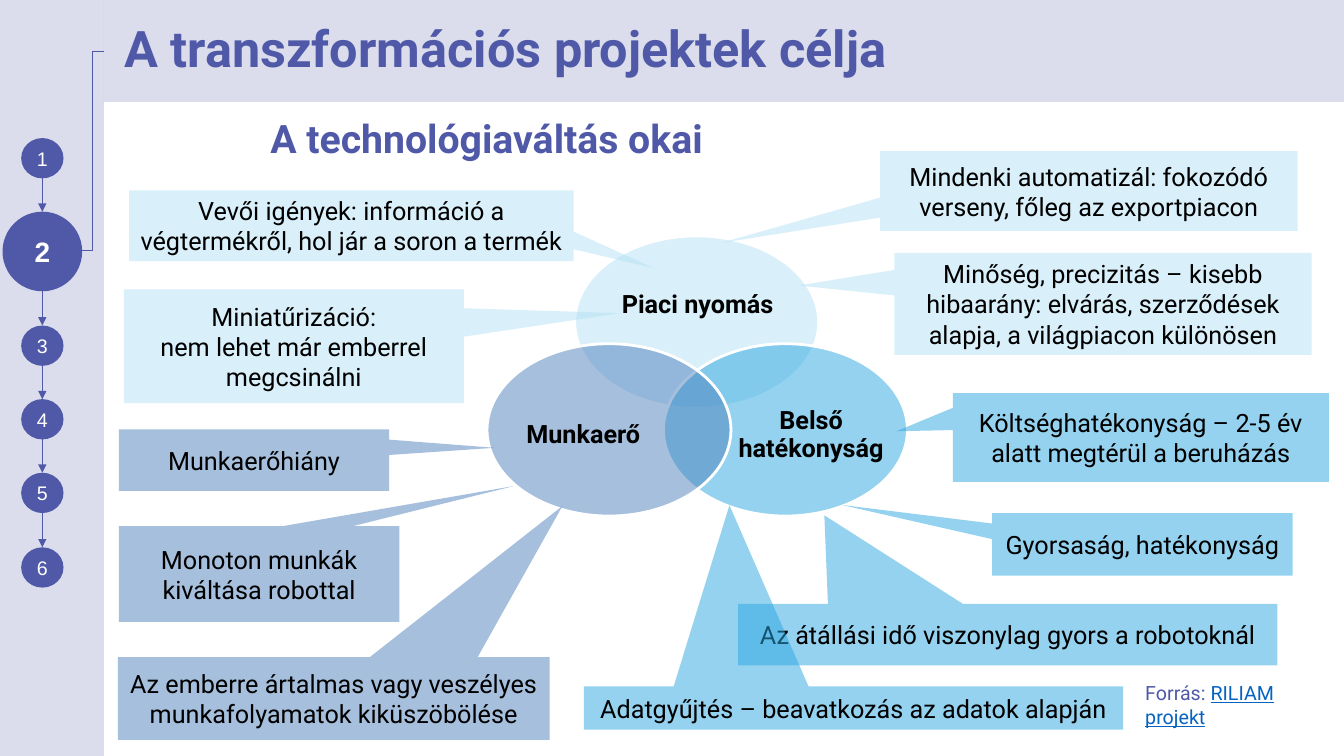
"""Build the slide on why companies launch technology transformation projects."""
from dataclasses import dataclass
from itertools import pairwise

from lxml.etree import SubElement
from pptx import Presentation
from pptx.dml.color import RGBColor
from pptx.enum.shapes import MSO_CONNECTOR as CONN, MSO_SHAPE as SHAPE
from pptx.enum.text import MSO_ANCHOR as ANCHOR, MSO_AUTO_SIZE as AUTO, PP_ALIGN as ALIGN
from pptx.oxml.ns import qn
from pptx.util import Inches, Pt

COLORS = {
    "indigo": "4F59A8",
    "market": "B5E0F5",
    "efficiency": "2BA6E1",
    "labour": "4F81BD",
    "link": "0563C1",
    "white": "FFFFFF",
    "black": "000000",
}
Box = tuple[float, float, float, float]


@dataclass
class Step:
    label: str
    top: float
    width: float = 0.42
    height: float = 0.4
    size: int = 14
    bold: bool = False


@dataclass
class Reason:
    label: str
    color: str
    left: float
    top: float
    text_box: Box


@dataclass
class Callout:
    text: str
    color: str
    box: Box
    tip: tuple[float, float]


STEP_X = 0.42
STEPS = [
    Step("1", 1.37),
    Step("2", 2.1, 0.79, 0.79, 20, True),
    Step("3", 3.23),
    Step("4", 3.96),
    Step("5", 4.69),
    Step("6", 5.43),
]
REASONS = [
    Reason("Piaci nyomás", "market", 5.7, 2.34, (6.03, 2.64, 1.78, 0.77)),
    Reason("Belső hatékonyság", "efficiency", 6.58, 3.41, (7.32, 3.85, 1.45, 0.94)),
    Reason("Munkaerő", "labour", 4.83, 3.41, (5.06, 3.85, 1.45, 0.94)),
]
CALLOUTS = [
    Callout("Mindenki automatizál: fokozódó verseny, főleg az exportpiacon",
            "market", (8.73, 1.5, 4.14, 0.79), (-0.88, 0.65)),
    Callout("Monoton munkák kiváltása robottal",
            "labour", (1.18, 5.22, 2.78, 0.95), (0.91, -0.92)),
    Callout("Költséghatékonyság – 2-5 év alatt megtérül a beruházás",
            "efficiency", (9.45, 3.9, 3.73, 0.88), (-0.65, -0.07)),
    Callout("Minőség, precizitás – kisebb hibaarány: elvárás, szerződések alapja, "
            "a világpiacon különösen",
            "market", (8.87, 2.51, 4.14, 1.01), (-0.73, -0.18)),
    Callout("Miniatűrizáció:\nnem lehet már emberrel megcsinálni",
            "market", (1.23, 2.87, 3.37, 1.13), (0.96, -0.29)),
    Callout("Vevői igények: információ a végtermékről, hol jár a soron a termék",
            "market", (1.28, 1.89, 4.41, 0.7), (0.68, 0.6)),
    Callout("Gyorsaság, hatékonyság",
            "efficiency", (9.84, 5.09, 2.98, 0.62), (-1, -0.63)),
    Callout("Az átállási idő viszonylag gyors a robotoknál",
            "efficiency", (7.32, 5.99, 5.35, 0.61), (-0.34, -1.94)),
    Callout("Adatgyűjtés – beavatkozás az adatok alapján",
            "efficiency", (5.79, 6.81, 5.35, 0.43), (-0.23, -4.68)),
    Callout("Munkaerőhiány",
            "labour", (1.18, 4.26, 2.68, 0.61), (0.89, -0.2)),
    Callout("Az emberre ártalmas vagy veszélyes munkafolyamatok kiküszöbölése",
            "labour", (1.17, 6.52, 4.28, 0.82), (0.53, -2.33)),
]


def rgb(name: str) -> RGBColor:
    return RGBColor.from_string(COLORS[name])


def write(tf, text: str, *, size: float = 18, color: str = "black", font: str = "Roboto",
          bold: bool = False, underline: bool = False, align=ALIGN.CENTER,
          spacing: float = 1.0, indent: float = 0, append: bool = False) -> None:
    for i, line in enumerate(text.split("\n")):
        p = tf.add_paragraph() if i else tf.paragraphs[-1]
        if not append:
            p.alignment = align
            p.line_spacing = spacing
            pPr = p._p.get_or_add_pPr()
            pPr.set("marL", str(Inches(indent)))
            pPr.set("indent", "0")
        r = p.add_run()
        r.text = line
        r.font.name = font
        r.font.size = Pt(size)
        r.font.bold = bold
        r.font.underline = underline
        r.font.color.rgb = rgb(color)


def frame(s, inset: tuple[float, float] = (0.1, 0.05), anchor=ANCHOR.MIDDLE):
    tf = s.text_frame
    tf.word_wrap = True
    tf.auto_size = AUTO.NONE
    tf.vertical_anchor = anchor
    tf.margin_left = tf.margin_right = Inches(inset[0])
    tf.margin_top = tf.margin_bottom = Inches(inset[1])
    return tf


def paint(s, color: str, opacity: int = 100) -> None:
    s.fill.solid()
    s.fill.fore_color.rgb = rgb(color)
    if opacity < 100:
        clr = s._element.spPr.find(qn("a:solidFill"))[0]
        SubElement(clr, qn("a:alpha"), val=str(opacity * 1000))


def shape(sl, kind, box: Box, color: str, opacity: int = 100):
    s = sl.shapes.add_shape(kind, *map(Inches, box))
    s.shadow.inherit = False
    s.line.fill.background()
    paint(s, color, opacity)
    return s


def text_box(sl, box: Box, **kwargs):
    return frame(sl.shapes.add_textbox(*map(Inches, box)), **kwargs)


def connect(sl, kind, ends: Box, width: float, arrow: bool = False) -> None:
    c = sl.shapes.add_connector(kind, *map(Inches, ends))
    c.line.color.rgb = rgb("indigo")
    c.line.width = Pt(width)
    if arrow:
        SubElement(c.line._get_or_add_ln(), qn("a:tailEnd"), type="triangle")
    SubElement(c._element.spPr, qn("a:effectLst"))


def draw_title(sl) -> None:
    s = sl.shapes.title
    s.left, s.top, s.width, s.height = map(Inches, (1.03, 0, 12.3, 1.01))
    paint(s, "indigo", 20)
    write(frame(s), "A transzformációs projektek célja", size=36, color="indigo", bold=True,
          align=ALIGN.LEFT, spacing=0.9, indent=0.1)


def draw_steps(sl) -> None:
    shape(sl, SHAPE.RECTANGLE, (0, 0, 1.03, 7.5), "indigo", 20)
    for a, b in pairwise(STEPS):
        connect(sl, CONN.STRAIGHT, (STEP_X, a.top + a.height, STEP_X, b.top), 1, arrow=True)
    for step in STEPS:
        box = (STEP_X - step.width / 2, step.top, step.width, step.height)
        s = shape(sl, SHAPE.OVAL, box, "indigo")
        write(frame(s, (0, 0)), step.label, size=step.size, color="white", font="Arial",
              bold=step.bold)
    connect(sl, CONN.ELBOW, (0.81, 2.49, 1.03, 0.51), 0.75)


def draw_reason(sl, reason: Reason) -> None:
    s = shape(sl, SHAPE.OVAL, (reason.left, reason.top, 2.42, 1.71), reason.color, 50)
    s.line.color.rgb = rgb("white")
    s.line.width = Pt(2)
    write(text_box(sl, reason.text_box, inset=(0, 0)), reason.label, bold=True, spacing=0.9)


def draw_callout(sl, callout: Callout) -> None:
    s = shape(sl, SHAPE.RECTANGULAR_CALLOUT, callout.box, callout.color, 50)
    s.adjustments[0], s.adjustments[1] = callout.tip
    write(frame(s), callout.text)


def main() -> None:
    prs = Presentation()
    prs.slide_width, prs.slide_height = Inches(13.33), Inches(7.5)
    sl = prs.slides.add_slide(prs.slide_layouts[5])
    draw_title(sl)
    draw_steps(sl)
    for reason in REASONS:
        draw_reason(sl, reason)
    for callout in CALLOUTS:
        draw_callout(sl, callout)
    write(text_box(sl, (1.18, 0.95, 7.29, 0.9)), "A technológiaváltás okai", size=28,
          color="indigo", bold=True, spacing=0.9)
    tf = text_box(sl, (11.14, 6.71, 2.19, 0.73), anchor=ANCHOR.TOP)
    write(tf, "Forrás: ", size=14, color="indigo", align=ALIGN.LEFT, indent=0.12)
    write(tf, "RILIAM projekt", size=14, color="link", underline=True, append=True)
    prs.save("out.pptx")


if __name__ == "__main__":
    main()
